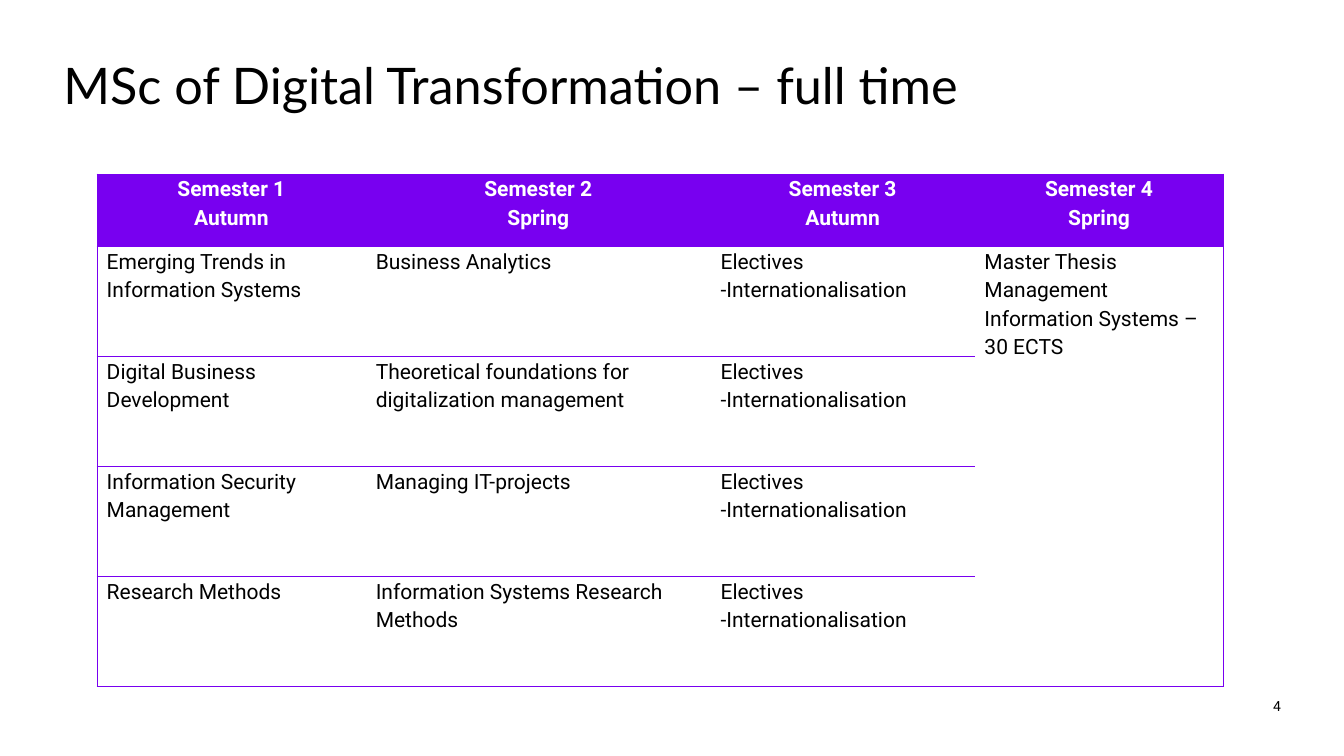
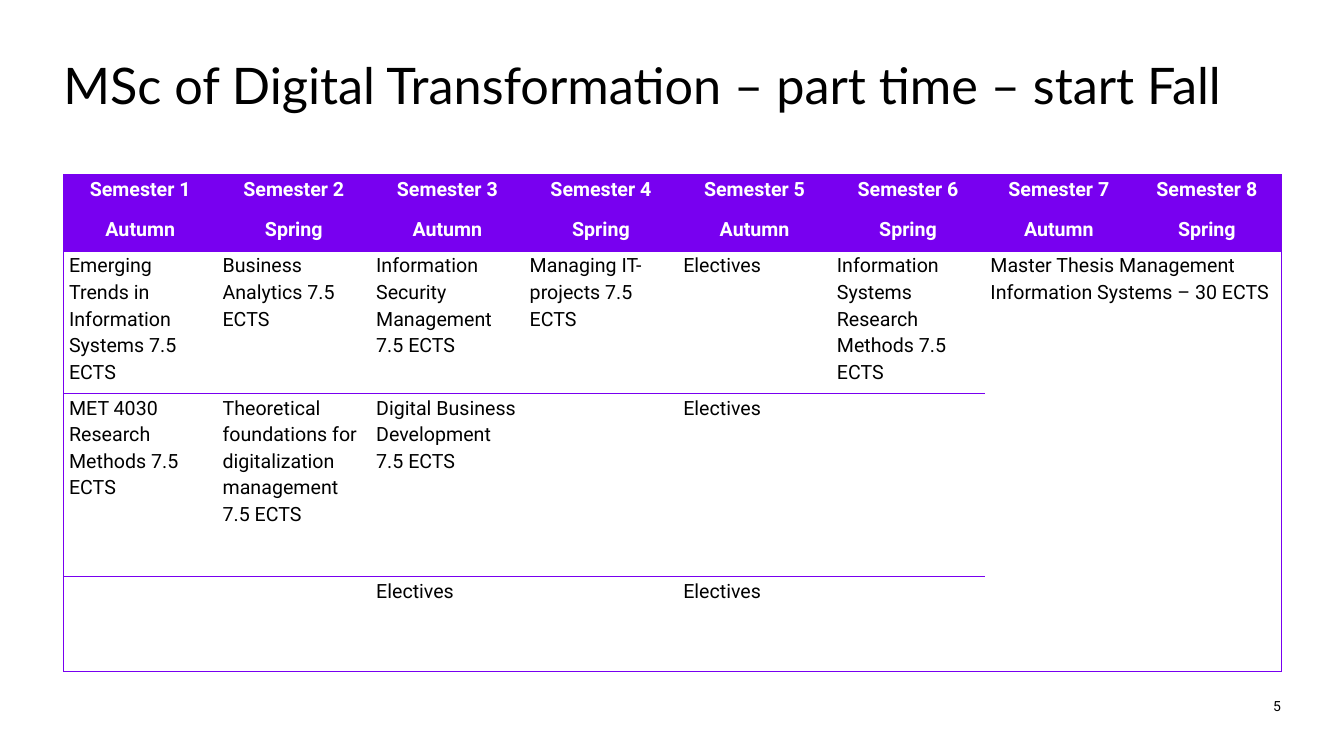
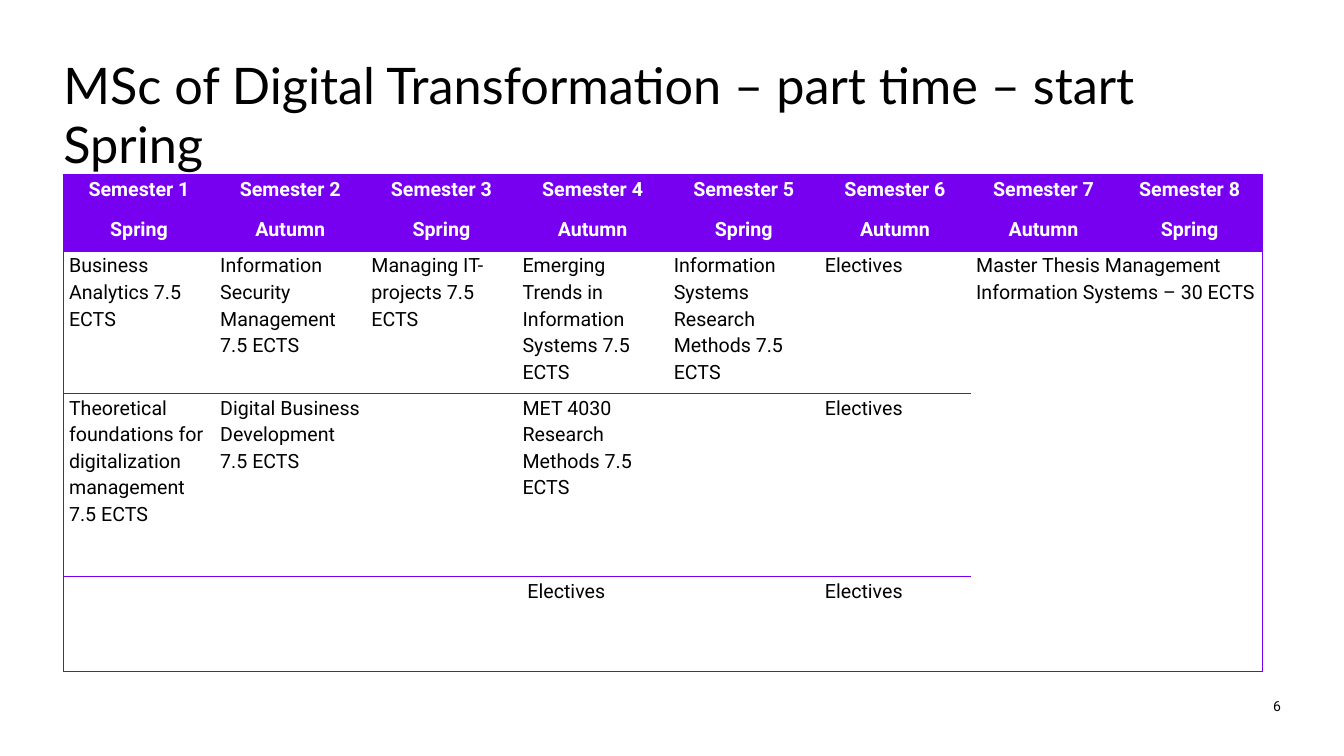
from pptx import Presentation
from pptx.dml.color import RGBColor
from pptx.enum.text import MSO_ANCHOR, PP_ALIGN
from pptx.oxml import parse_xml
from pptx.oxml.ns import nsdecls
from pptx.util import Cm, Pt

PURPLE = RGBColor(0x78, 0x00, 0xF0)
BLACK = RGBColor(0x00, 0x00, 0x00)
WHITE = RGBColor(0xFF, 0xFF, 0xFF)
TITLE_FONT = "Lato"
BODY_FONT = "Roboto"


class StudyPlanDeck:
    """Holds the shared style and the slide being built."""

    def __init__(self):
        self.deck = Presentation()
        self.deck.slide_width = Cm(33.87)
        self.deck.slide_height = Cm(19.05)
        self.page = None

    def add_page(self, title, number, title_width=30.84):
        self.page = self.deck.slides.add_slide(self.deck.slide_layouts[6])
        self.text(title, 1.6, 1.4, title_width, 3, TITLE_FONT, 36, 42)
        self.text(str(number), 28.88, 17.58, 3.4, 0.43, BODY_FONT, 10, 12,
                  PP_ALIGN.RIGHT, MSO_ANCHOR.MIDDLE)

    def text(self, words, left, top, width, height, font, size, spacing,
             align=PP_ALIGN.LEFT, anchor=MSO_ANCHOR.TOP):
        box = self.page.shapes.add_textbox(Cm(left), Cm(top), Cm(width), Cm(height))
        frame = box.text_frame
        frame.word_wrap = True
        frame.vertical_anchor = anchor
        frame.margin_left = frame.margin_right = 0
        frame.margin_top = frame.margin_bottom = 0
        frame.text = words
        para = frame.paragraphs[0]
        para.alignment = align
        para.line_spacing = Pt(spacing)
        self.style_font(para, font, size, BLACK)

    def style_font(self, para, font, size, color, bold=False):
        para.font.name = font
        para.font.size = Pt(size)
        para.font.bold = bold
        para.font.color.rgb = color

    def borders(self, cell, visible):
        """Draw the named sides (L, R, T, B) in purple and clear the others."""
        properties = cell._tc.get_or_add_tcPr()
        for side in "LRTB":
            paint = (f'<a:solidFill><a:srgbClr val="{PURPLE}"/></a:solidFill>'
                     if side in visible else "<a:noFill/>")
            properties.append(parse_xml(
                f'<a:ln{side} {nsdecls("a")} w="{Pt(0.5)}">{paint}</a:ln{side}>'))

    def plan_table(self, left, top, widths, heights, seasons, courses, thesis_columns,
                   size, inset, space_after=0):
        """Semester headings over courses; the thesis fills the last columns."""
        row_count, column_count = len(heights), len(widths)
        thesis_start = column_count - thesis_columns
        table = self.page.shapes.add_table(
            row_count, column_count, Cm(left), Cm(top),
            Cm(sum(widths)), Cm(sum(heights))).table
        table.first_row = table.horz_banding = False
        for column, width in zip(table.columns, widths):
            column.width = Cm(width)
        for row, height in zip(table.rows, heights):
            row.height = Cm(height)

        headings = [f"Semester {number}\n{season}"
                    for number, season in enumerate(seasons, 1)]
        for r, words_in_row in enumerate([headings] + courses):
            for c in range(column_count):
                cell = table.cell(r, c)
                in_thesis = r > 0 and c >= thesis_start
                visible = "L" if c == 0 else "R" if c == column_count - 1 else ""
                if not in_thesis or r == 1:
                    visible += "T"
                if not in_thesis or r == row_count - 1:
                    visible += "B"
                if in_thesis and r == 1 and c == thesis_start:
                    visible = "RTB"
                self.borders(cell, visible)
                words = words_in_row[c] if c < len(words_in_row) else ""
                self.fill_cell(cell, words, r == 0, size, inset, space_after)
        table.cell(1, thesis_start).merge(table.cell(row_count - 1, column_count - 1))

    def fill_cell(self, cell, words, is_heading, size, inset, space_after):
        if is_heading:
            cell.fill.solid()
            cell.fill.fore_color.rgb = PURPLE
        else:
            cell.fill.background()
        cell.margin_left = cell.margin_right = Cm(inset)
        cell.margin_top = cell.margin_bottom = 0
        cell.text = words
        for para in cell.text_frame.paragraphs:
            para.alignment = PP_ALIGN.CENTER if is_heading else PP_ALIGN.LEFT
            para.line_spacing = 1.15
            para.space_after = Pt(space_after)
            self.style_font(para, BODY_FONT, size,
                            WHITE if is_heading else BLACK, is_heading)

    def part_time_table(self, column_width, thesis_width, seasons, courses):
        self.plan_table(1.6, 4.4, [column_width] * 6 + [thesis_width] * 2,
                        [1.93, 3.58, 4.62, 2.39], seasons, courses,
                        thesis_columns=2, size=14, inset=0.14, space_after=10)


# Course names
THESIS = "Master Thesis Management Information Systems – 30 ECTS"
TRENDS = "Emerging Trends in Information Systems"
ANALYTICS = "Business Analytics"
BUSINESS = "Digital Business Development"
THEORY = "Theoretical foundations for digitalization management"
SECURITY = "Information Security Management"
PROJECTS = "Managing IT-projects"
METHODS = "Research Methods"
SYSTEMS_METHODS = "Information Systems Research Methods"
ELECTIVES = "Electives"
ABROAD = "Electives -Internationalisation"


def credits(course):
    return f"{course} 7.5 ECTS"


def main():
    plan = StudyPlanDeck()

    # Full time
    plan.add_page("MSc of Digital Transformation – full time", 4, title_width=25.4)
    plan.plan_table(
        2.44, 4.38, [6.78, 8.69, 6.65, 6.27], [1.83] + [2.77] * 4,
        ["Autumn", "Spring"] * 2,
        [[TRENDS, ANALYTICS, ABROAD, THESIS],
         [BUSINESS, THEORY, ABROAD],
         [SECURITY, PROJECTS, ABROAD],
         [METHODS, SYSTEMS_METHODS, ABROAD]],
        thesis_columns=1, size=15, inset=0.25)

    # Part time, autumn start
    plan.add_page("MSc of Digital Transformation – part time – start Fall", 5)
    plan.part_time_table(
        3.87, 3.73, ["Autumn", "Spring"] * 4,
        [[credits(TRENDS), credits(ANALYTICS), credits(SECURITY), credits(PROJECTS),
          ELECTIVES, credits(SYSTEMS_METHODS), THESIS],
         [credits(f"MET 4030 {METHODS}"), credits(THEORY), credits(BUSINESS), "",
          ELECTIVES],
         ["", "", ELECTIVES, "", ELECTIVES]])

    # Part time, spring start
    plan.add_page("MSc of Digital Transformation – part time – start Spring", 6)
    plan.part_time_table(
        3.81, 3.68, ["Spring", "Autumn"] * 3 + ["Autumn", "Spring"],
        [[credits(ANALYTICS), credits(SECURITY), credits(PROJECTS), credits(TRENDS),
          credits(SYSTEMS_METHODS), ELECTIVES, THESIS],
         [credits(THEORY), credits(BUSINESS), "", credits(f"MET 4030 {METHODS}"), "",
          ELECTIVES],
         ["", "", "", f" {ELECTIVES}", "", ELECTIVES]])

    plan.deck.save("out.pptx")


if __name__ == "__main__":
    main()
